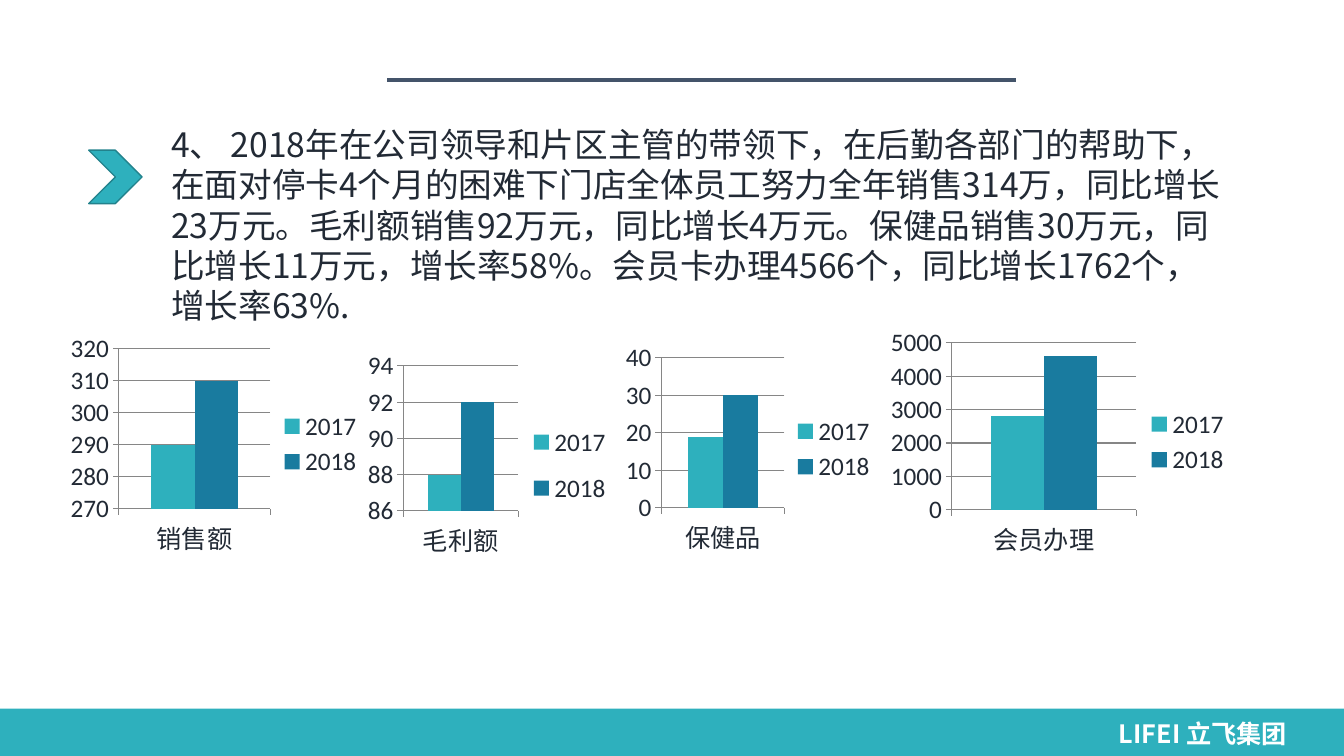
from lxml import etree
from pptx import Presentation
from pptx.chart.data import CategoryChartData
from pptx.dml.color import RGBColor
from pptx.enum.chart import XL_CHART_TYPE as ChartType, XL_LEGEND_POSITION as LegendSide
from pptx.enum.chart import XL_TICK_MARK as Tick
from pptx.enum.shapes import MSO_CONNECTOR as Connector, MSO_SHAPE as Shape
from pptx.oxml.ns import qn
from pptx.util import Inches, Pt

COLORS = {"teal": "2EB0BD", "teal edge": "22828C", "blue": "197B9F", "rule": "44546A",
          "ink": "222A35", "grid": "868686", "white": "FFFFFF"}
FONT = "Noto Sans CJK SC"


def color(name):
    return RGBColor.from_string(COLORS[name])


def add_text(box, words, size, ink, bold=False, leading=None):
    frame = slide.shapes.add_textbox(*map(Inches, box)).text_frame
    frame.word_wrap = True
    paragraph = frame.paragraphs[0]
    paragraph.text = words
    paragraph.line_spacing = leading
    paragraph.font.name, paragraph.font.size = FONT, Pt(size)
    paragraph.font.bold = bold
    paragraph.font.color.rgb = color(ink)


deck = Presentation()
deck.slide_width, deck.slide_height = Inches(13.33), Inches(7.5)
slide = deck.slides.add_slide(deck.slide_layouts[6])

# Title rule
rule = slide.shapes.add_connector(Connector.STRAIGHT, *map(Inches, (3.84, 0.79, 10.08, 0.79)))
rule.line.color.rgb = color("rule")
rule.line.width = Pt(3)
etree.SubElement(rule._element.spPr, qn("a:effectLst"))

# Footer band and chevron marker
for preset, box, edge in ((Shape.RECTANGLE, (0, 7.03, 13.33, 0.49), None),
                          (Shape.CHEVRON, (0.88, 1.49, 0.53, 0.53), "teal edge")):
    block = slide.shapes.add_shape(preset, *map(Inches, box))
    block.shadow.inherit = False
    block.fill.solid()
    block.fill.fore_color.rgb = color("teal")
    if edge:
        block.line.color.rgb = color(edge)
        block.line.width = Pt(1)
    else:
        block.line.fill.background()

# Footer name and summary
add_text((11, 7.08, 2.44, 0.4), "LIFEI 立飞集团", 18, "white", bold=True)
add_text((1.6, 1.18, 10.7, 2.12),
         "4、 2018年在公司领导和片区主管的带领下，在后勤各部门的帮助下，"
         "在面对停卡4个月的困难下门店全体员工努力全年销售314万，同比增长23万元。"
         "毛利额销售92万元，同比增长4万元。保健品销售30万元，同比增长11万元，增长率58%。"
         "会员卡办理4566个，同比增长1762个，增长率63%.", 24, "ink", leading=Pt(28.8))

# Yearly comparisons: measure, 2017, 2018, axis (low, high, step), frame, plot area, legend area
comparisons = (
    ("销售额", 290, 310, (270, 320, 10), (0.63, 3.26, 3.07, 2.29), (1.18, 3.46, 1.5, 1.59), None),
    ("毛利额", 88, 92, (86, 94, 2), (3.59, 3.44, 2.55, 2.13), (4, 3.63, 1.14, 1.44),
     (5.3, 4.08, 0.8, 1.07)),
    ("保健品", 19, 30, (0, 40, 10), (6.16, 3.36, 2.63, 2.19), (6.56, 3.55, 1.22, 1.49), None),
    ("会员办理", 2800, 4600, (0, 5000, 1000), (8.76, 3.21, 3.54, 2.35), (9.44, 3.4, 1.83, 1.66),
     None),
)
for measure, before, after, (low, high, step), frame, plot_area, legend_area in comparisons:
    figures = CategoryChartData()
    figures.categories = [measure]
    figures.add_series("2017", [before])
    figures.add_series("2018", [after])
    chart = slide.shapes.add_chart(ChartType.COLUMN_CLUSTERED, *map(Inches, frame), figures).chart
    chart.has_title = False
    chart.font.name, chart.font.size = "Calibri", Pt(18)
    chart.font.color.rgb = color("ink")
    chart.has_legend = True
    chart.legend.position = LegendSide.RIGHT
    chart.legend.include_in_layout = False

    plot = chart.plots[0]
    plot.gap_width, plot.overlap = 150, 0
    plot.vary_by_categories = False
    for series, fill in zip(plot.series, ("teal", "blue")):
        series.format.fill.solid()
        series.format.fill.fore_color.rgb = color(fill)

    scale = chart.value_axis
    scale.minimum_scale, scale.maximum_scale, scale.major_unit = low, high, step
    scale.has_major_gridlines = True
    for line in (scale.format.line, chart.category_axis.format.line,
                 scale.major_gridlines.format.line):
        line.color.rgb = color("grid")
        line.width = Pt(0.75)
    for axis in (scale, chart.category_axis):
        axis.major_tick_mark = Tick.OUTSIDE

    # Place plot and legend as shares of the chart frame
    left, top, width, height = frame
    for part, area, position in ((chart._chartSpace.chart.plotArea, plot_area, 0),
                                 (chart.legend._element, legend_area, 1)):
        if area is None:
            continue
        for old in part.findall(qn("c:layout")):
            part.remove(old)
        layout = etree.Element(qn("c:layout"))
        manual = etree.SubElement(layout, qn("c:manualLayout"))
        x, y, w, h = area
        settings = [("xMode", "edge"), ("yMode", "edge"),
                    ("x", (x - left) / width), ("y", (y - top) / height),
                    ("w", w / width), ("h", h / height)]
        if area is plot_area:
            settings.insert(0, ("layoutTarget", "inner"))
        for tag, value in settings:
            etree.SubElement(manual, qn(f"c:{tag}")).set("val", str(value))
        part.insert(position, layout)

deck.save("out.pptx")
